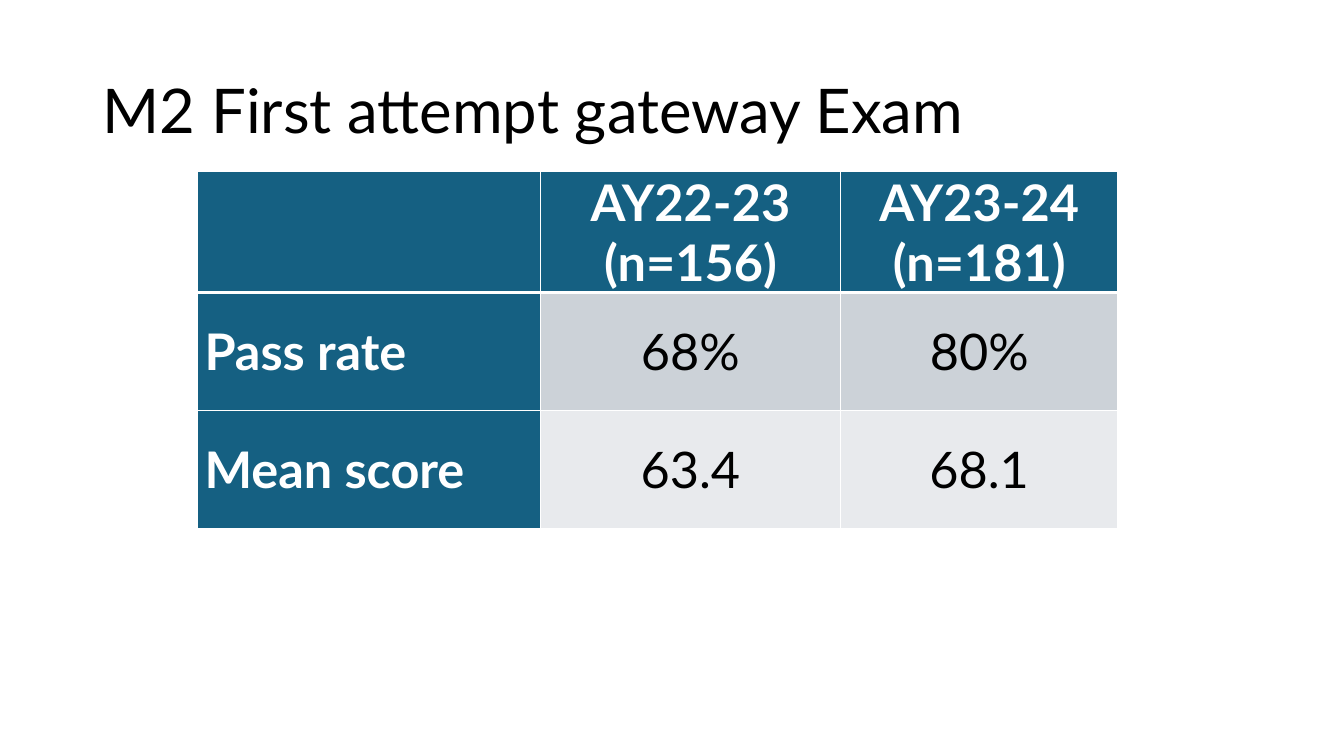
from typing import NamedTuple

from lxml.etree import SubElement
from pptx import Presentation
from pptx.dml.color import RGBColor
from pptx.enum.text import MSO_ANCHOR, PP_ALIGN
from pptx.oxml.ns import qn
from pptx.util import Inches, Pt

FONT = "Lato"
COLORS = {
    "head": "156082",
    "dark": "CCD2D8",
    "light": "E8EAED",
    "white": "FFFFFF",
    "black": "000000",
}
COLS = (25.5, 22.35, 20.63)


class Row(NamedTuple):
    texts: tuple[str, str, str]
    fill: str
    height: float
    top: int
    base: int


ROWS = (
    Row(("", "AY22-23 (n=156)", "AY23-24 (n=181)"), "head", 15.87, 1, 3),
    Row(("Pass rate", "68%", "80%"), "dark", 15.6, 3, 1),
    Row(("Mean score", "63.4", "68.1"), "light", 15.6, 1, 1),
)

deck = Presentation()
deck.slide_width, deck.slide_height = Inches(13.33), Inches(7.5)
slide = deck.slides.add_slide(deck.slide_layouts[6])


def wide(share: float) -> int:
    return round(deck.slide_width * share / 100)


def high(share: float) -> int:
    return round(deck.slide_height * share / 100)


def style(para, size: int, color: str, bold: bool = False) -> None:
    font = para.font
    font.name, font.size, font.bold = FONT, Pt(size), bold
    font.color.rgb = RGBColor.from_string(COLORS[color])


def edge(cell, row: Row) -> None:
    props = cell._tc.get_or_add_tcPr()
    sides = {"lnL": 1, "lnR": 1, "lnT": row.top, "lnB": row.base}
    for place, (side, width) in enumerate(sides.items()):
        line = SubElement(props, qn(f"a:{side}"), w=str(Pt(width)))
        fill = SubElement(line, qn("a:solidFill"))
        SubElement(fill, qn("a:srgbClr"), val=COLORS["white"])
        props.insert(place, line)


def draw_cell(cell, row: Row, col: int) -> None:
    head = row.fill == "head" or col == 0
    cell.fill.solid()
    cell.fill.fore_color.rgb = RGBColor.from_string(COLORS["head" if head else row.fill])
    cell.vertical_anchor = MSO_ANCHOR.MIDDLE
    cell.margin_left = cell.margin_right = Inches(0.07)
    cell.margin_top = cell.margin_bottom = 0
    edge(cell, row)
    if row.texts[col]:
        cell.text = row.texts[col]
        para = cell.text_frame.paragraphs[0]
        para.alignment = PP_ALIGN.CENTER if col else PP_ALIGN.LEFT
        style(para, 36, "white" if head else "black", head)


def draw_title(text: str) -> None:
    box = slide.shapes.add_textbox(wide(6.9), high(5.33), wide(86.27), high(19.33))
    frame = box.text_frame
    frame.word_wrap = True
    frame.vertical_anchor = MSO_ANCHOR.MIDDLE
    para = frame.paragraphs[0]
    para.text = text
    para.line_spacing = 0.9
    style(para, 44, "black")


def draw_table() -> None:
    width, height = wide(sum(COLS)), high(sum(row.height for row in ROWS))
    table = slide.shapes.add_table(
        len(ROWS), len(COLS), wide(14.7), high(22.67), width, height
    ).table
    table.first_col = True
    for col, share in enumerate(COLS):
        table.columns[col].width = wide(share)
    for place, row in enumerate(ROWS):
        table.rows[place].height = high(row.height)
        for col in range(len(COLS)):
            draw_cell(table.cell(place, col), row, col)


def main() -> None:
    draw_title("M2 First attempt gateway Exam")
    draw_table()
    deck.save("out.pptx")


if __name__ == "__main__":
    main()
